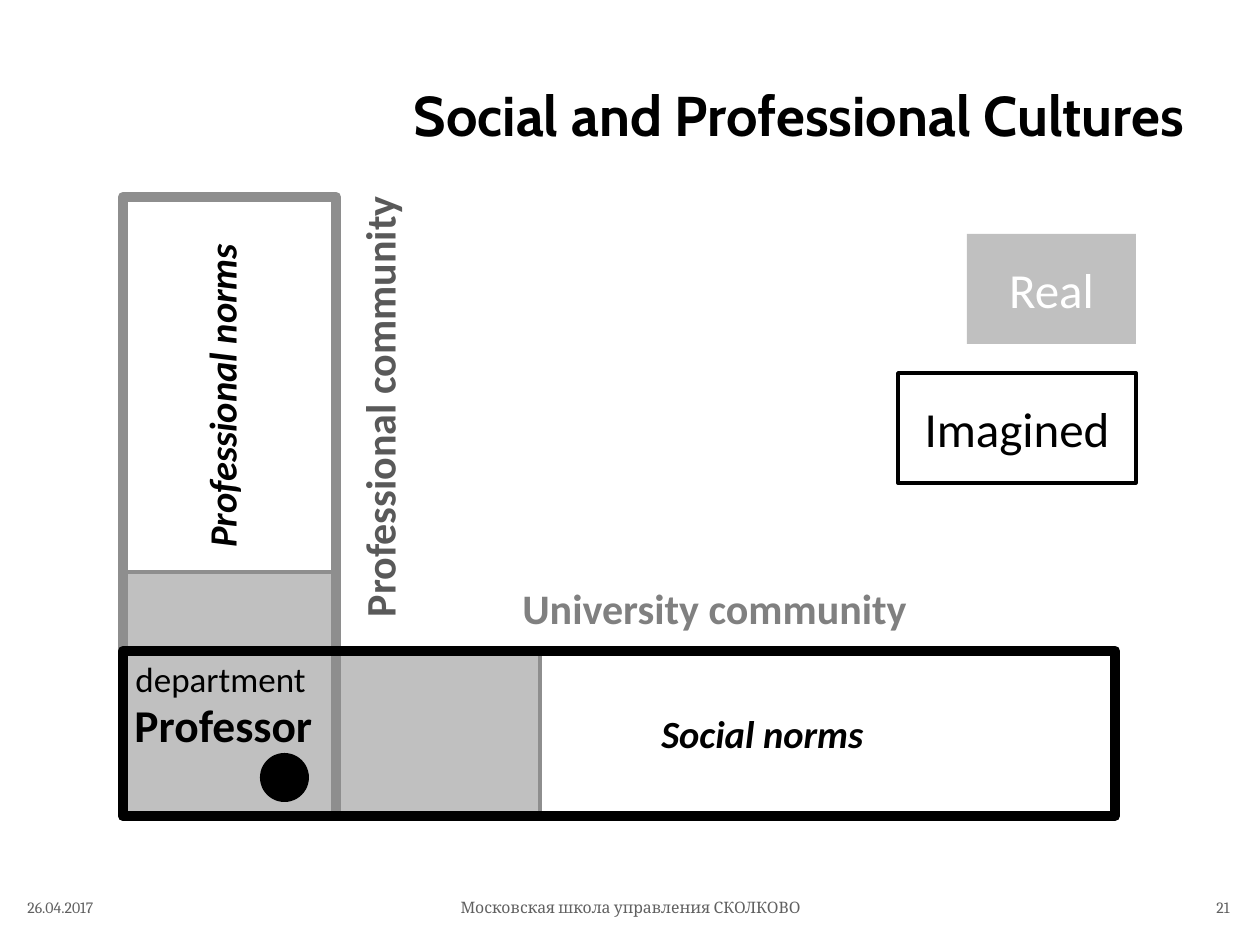
from dataclasses import dataclass

from pptx import Presentation
from pptx.dml.color import RGBColor
from pptx.enum.shapes import MSO_SHAPE
from pptx.enum.text import MSO_ANCHOR, PP_ALIGN
from pptx.util import Pt

EMU_PER_PX = 914400 / 126
RECTANGLE, OVAL = MSO_SHAPE.RECTANGLE, MSO_SHAPE.OVAL
LEFT, CENTER, RIGHT = PP_ALIGN.LEFT, PP_ALIGN.CENTER, PP_ALIGN.RIGHT
TOP, MIDDLE = MSO_ANCHOR.TOP, MSO_ANCHOR.MIDDLE


@dataclass(frozen=True)
class Theme:
    black: str = "000000"
    white: str = "FFFFFF"
    real: str = "C0C0C0"
    edge: str = "8E8E8E"
    university: str = "808080"
    profession: str = "595959"
    footer: str = "606060"
    title_font: str = "Cabin"
    body_font: str = "Calibri"
    footer_font: str = "Cambria"
    title_size: int = 32
    legend_size: int = 28
    person_size: int = 26
    community_size: int = 24
    norms_size: int = 22
    department_size: int = 20
    footer_size: int = 9
    thin: int = 2
    thick: int = 6


THEME = Theme()


def px(value):
    return round(value * EMU_PER_PX)


def write(shape, text, size, color=THEME.black, font=THEME.body_font, bold=False,
          italic=False, align=LEFT, anchor=TOP, wrap=True):
    frame = shape.text_frame
    frame.word_wrap = wrap
    frame.vertical_anchor = anchor
    paragraph = frame.paragraphs[0]
    paragraph.alignment = align
    run = paragraph.add_run()
    run.text = text
    run.font.name = font
    run.font.size = Pt(size)
    run.font.bold = bold
    run.font.italic = italic
    run.font.color.rgb = RGBColor.from_string(color)


def add_label(slide, box, text, size, rotation=0, **style):
    shape = slide.shapes.add_textbox(*map(px, box))
    shape.rotation = rotation
    write(shape, text, size, **style)


def add_block(slide, box, fill=None, line=None, width=THEME.thin, kind=RECTANGLE):
    shape = slide.shapes.add_shape(kind, *map(px, box))
    shape.shadow.inherit = False
    if fill:
        shape.fill.solid()
        shape.fill.fore_color.rgb = RGBColor.from_string(fill)
    else:
        shape.fill.background()
    if line:
        shape.line.color.rgb = RGBColor.from_string(line)
        shape.line.width = Pt(width)
    else:
        shape.line.fill.background()
    return shape


def add_title(slide, box):
    add_label(slide, box, "Social and Professional Cultures", THEME.title_size,
              font=THEME.title_font, bold=True, align=RIGHT, anchor=MIDDLE)


def add_cultures(slide, box):
    left, top, width, height = box
    column_width, row_height = 213, 165
    row_top = top + height - row_height

    add_block(slide, (left, row_top - 79, column_width, 79), THEME.real, THEME.edge)
    add_block(slide, (left, row_top, 417, row_height), THEME.real, THEME.edge)
    add_block(slide, (left, top, column_width, height), line=THEME.edge, width=THEME.thick)
    add_block(slide, (left, row_top, width, row_height), line=THEME.black, width=THEME.thick)
    add_block(slide, (left + 137, row_top + 102, 49, 49), THEME.black, kind=OVAL)

    community = dict(size=THEME.community_size, bold=True, wrap=False)
    norms = dict(size=THEME.norms_size, bold=True, italic=True, wrap=False)
    add_label(slide, (left + 387, row_top - 75, 413, 63), "University community",
              color=THEME.university, **community)
    add_label(slide, (left + 31, top + 176, 450, 63), "Professional community",
              rotation=270, color=THEME.profession, **community)
    add_label(slide, (left - 68, top + 167, 333, 59), "Professional norms",
              rotation=270, **norms)
    add_label(slide, (left + 526, row_top + 53, 229, 59), "Social norms", **norms)
    add_label(slide, (left, row_top, 198, 55), "department",
              THEME.department_size, wrap=False)
    add_label(slide, (left - 1, row_top + 40, 205, 68), "Professor",
              THEME.person_size, bold=True, wrap=False)


def add_legend(slide, box):
    left, top, width, height = box
    key_height, real_width = 110, 169
    real = add_block(slide, (left + width - real_width, top, real_width, key_height),
                     THEME.real)
    imagined = add_block(slide, (left, top + height - key_height, width, key_height),
                         line=THEME.black)
    for shape, text, color in ((real, "Real", THEME.white),
                               (imagined, "Imagined", THEME.black)):
        write(shape, text, THEME.legend_size, color=color, align=CENTER, anchor=MIDDLE)


def add_footer(slide, box):
    left, top, width, height = box
    side_width, middle_width = 294, 399
    for offset, part_width, text, align in (
        (0, side_width, "26.04.2017", LEFT),
        (416, middle_width, "Московская школа управления СКОЛКОВО", CENTER),
        (width - side_width, side_width, "21", RIGHT),
    ):
        add_label(slide, (left + offset, top, part_width, height), text,
                  THEME.footer_size, color=THEME.footer, font=THEME.footer_font,
                  align=align)


def main():
    presentation = Presentation()
    presentation.slide_width = px(1260)
    presentation.slide_height = px(945)
    slide = presentation.slides.add_slide(presentation.slide_layouts[6])
    add_title(slide, (312, 54, 885, 120))
    add_cultures(slide, (123, 197, 992, 619))
    add_legend(slide, (898, 234, 238, 249))
    add_footer(slide, (15, 892, 1227, 34))
    presentation.save("out.pptx")


if __name__ == "__main__":
    main()
